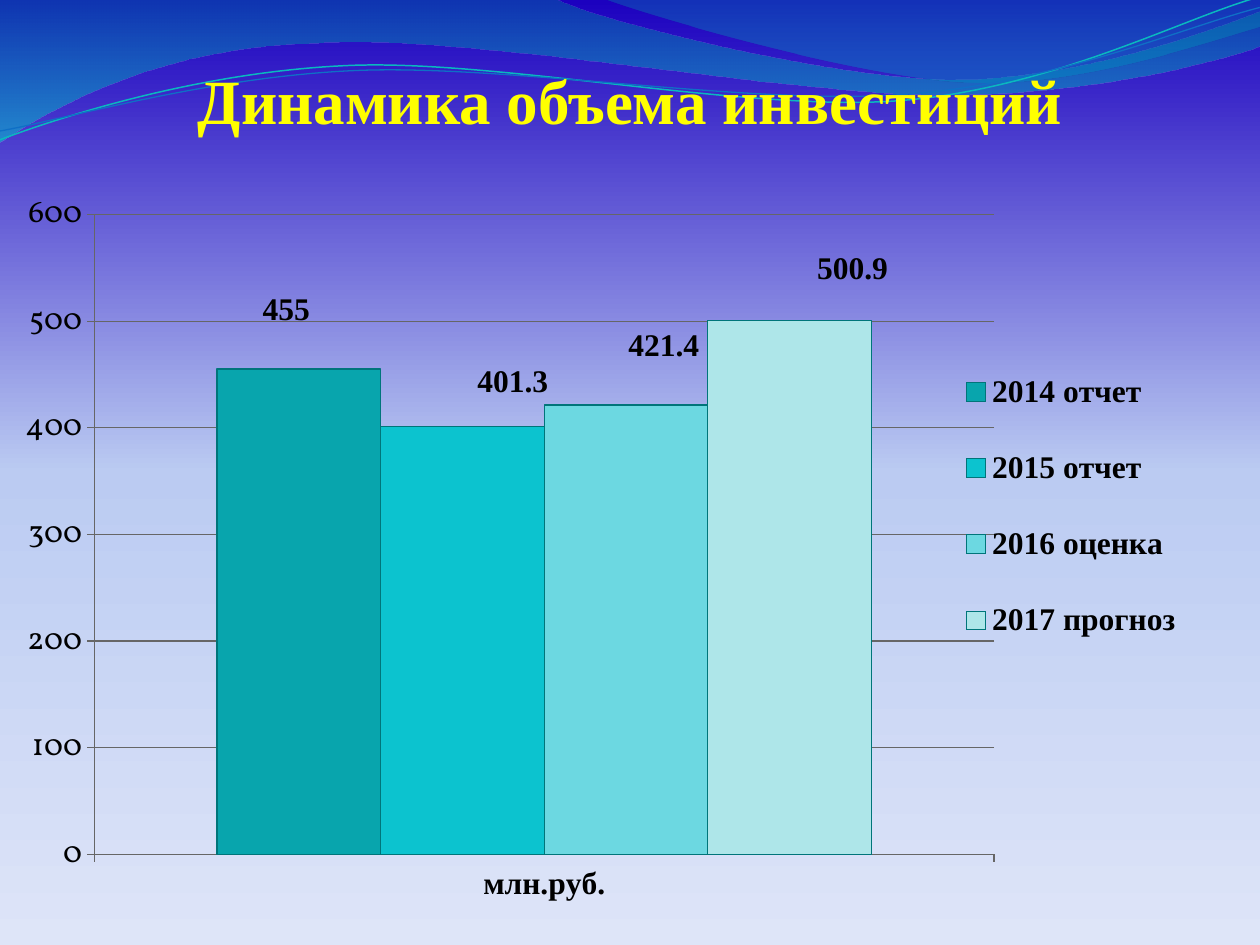
from dataclasses import dataclass
from math import cos, radians, sin

from lxml import etree
from pptx import Presentation
from pptx.chart.data import CategoryChartData
from pptx.dml.color import RGBColor
from pptx.enum.chart import (XL_CHART_TYPE, XL_LABEL_POSITION,
                             XL_LEGEND_POSITION, XL_TICK_MARK)
from pptx.enum.text import MSO_ANCHOR, PP_ALIGN
from pptx.oxml.ns import qn
from pptx.util import Inches, Pt

COLUMN = XL_CHART_TYPE.COLUMN_CLUSTERED
ABOVE = XL_LABEL_POSITION.OUTSIDE_END
RIGHT = XL_LEGEND_POSITION.RIGHT
OUTSIDE = XL_TICK_MARK.OUTSIDE
BOTTOM = MSO_ANCHOR.BOTTOM
CENTER = PP_ALIGN.CENTER


@dataclass(frozen=True)
class Theme:
    serif: str = "Times New Roman"
    digits: str = "Vollkorn"
    head: str = "FFFF00"
    ink: str = "000000"
    grid: str = "666666"
    edge: str = "00757A"
    head_size: int = 36
    size: int = 18


@dataclass(frozen=True)
class Stop:
    pos: int
    color: str
    alpha: int = 100


@dataclass(frozen=True)
class Wave:
    """Start point, then legs of 2 (line) or 6 (cubic curve) numbers."""
    start: tuple
    legs: tuple
    stops: tuple = ()
    line: str = ""
    width: float = 0
    turn: float = 0


@dataclass(frozen=True)
class Bar:
    name: str
    value: float
    color: str
    shift: tuple


THEME = Theme()
SKY = (Stop(0, "1C01BF"), Stop(50, "BBCBF2"), Stop(100, "DEE5F8"))
WAVES = (
    Wave((0, 0), ((4.4, -0.01), (4.76, 0.17, 6.64, 0.63, 7.58, 0.63),
                  (8.53, 0.63, 9.58, 0.26, 10, 0.09), (10.01, 0.36),
                  (9.83, 0.44, 8.7, 0.76, 7.46, 0.75),
                  (6.22, 0.75, 3.82, 0.28, 2.57, 0.34),
                  (1.29, 0.36, 0.46, 0.83, -0.01, 1.13)),
         stops=(Stop(0, "0074A1", 45), Stop(100, "00C6CF", 55))),
    Wave((4.79, -0.01), ((5.09, 0.11, 6.82, 0.62, 7.69, 0.65),
                         (8.56, 0.69, 9.61, 0.32, 10, 0.21), (10, 0)),
         stops=(Stop(0, "00A1A9", 30), Stop(80, "008BBF", 45))),
    Wave((0, 1.11), ((0.48, 0.93, 1.58, 0.57, 2.77, 0.52),
                     (3.95, 0.47, 5.93, 0.89, 7.13, 0.8),
                     (8.33, 0.71, 9.38, 0.15, 9.98, -0.02)),
         line="0AB8BF", width=0.85, turn=-2.7),
    Wave((0, 1.04), ((0.47, 0.96, 1.64, 0.61, 2.83, 0.56),
                     (4.03, 0.51, 5.97, 0.84, 7.17, 0.75),
                     (8.36, 0.67, 9.41, 0.21, 10, 0.06)),
         line="0F6FC6", width=0.75, turn=-2.7),
)
BARS = (
    Bar("2014 отчет", 455, "08A5AD", (-0.01, -0.05)),
    Bar("2015 отчет", 401.3, "0CC3CF", (0.04, -0.03)),
    Bar("2016 оценка", 421.4, "6CD8E1", (0.03, -0.05)),
    Bar("2017 прогноз", 500.9, "AEE6E9", (0.05, -0.04)),
)


def rgb(color: str) -> RGBColor:
    return RGBColor.from_string(color)


def style(font, name: str, size: float, color: str, bold: bool) -> None:
    font.name, font.size, font.bold = name, Pt(size), bold
    font.color.rgb = rgb(color)


def stroke(line, color: str, width: float = 0.75) -> None:
    line.color.rgb = rgb(color)
    line.width = Pt(width)


def blend(fill, root, stops: tuple) -> None:
    """Give the fill found under root a top-down gradient."""
    fill.gradient()
    grad = root.find(".//" + qn("a:gradFill"))
    for child in list(grad):
        grad.remove(child)
    bed = etree.SubElement(grad, qn("a:gsLst"))
    for stop in stops:
        mark = etree.SubElement(bed, qn("a:gs"), pos=str(stop.pos * 1000))
        tint = etree.SubElement(mark, qn("a:srgbClr"), val=stop.color)
        if stop.alpha < 100:
            etree.SubElement(tint, qn("a:alpha"), val=str(stop.alpha * 1000))
    etree.SubElement(grad, qn("a:lin"), ang="5400000", scaled="0")


def level(wave: Wave) -> list:
    """List the wave's points as they lie before its shape is turned."""
    flat = wave.start + sum(wave.legs, ())
    dots = list(zip(flat[::2], flat[1::2]))
    mid_x, mid_y = ((a + b) / 2 for a, b in zip(dots[0], dots[-1]))
    c, s = cos(radians(-wave.turn)), sin(radians(-wave.turn))
    return [(Inches(mid_x + (x - mid_x) * c - (y - mid_y) * s),
             Inches(mid_y + (x - mid_x) * s + (y - mid_y) * c))
            for x, y in dots]


def bend(shape, legs: tuple) -> None:
    """Join each three segments of a curved leg into one cubic curve."""
    track = shape._element.find(".//" + qn("a:path"))
    parts = iter(track.findall(qn("a:lnTo")))
    for leg in legs:
        first = next(parts)
        if len(leg) == 2:
            continue
        curve = etree.Element(qn("a:cubicBezTo"))
        first.addprevious(curve)
        for part in (first, next(parts), next(parts)):
            curve.append(part[0])
            track.remove(part)


def draw_wave(slide, wave: Wave) -> None:
    dots = level(wave)
    pen = slide.shapes.build_freeform(*dots[0])
    pen.add_line_segments(dots[1:], close=bool(wave.stops))
    shape = pen.convert_to_shape()
    bend(shape, wave.legs)
    shape.rotation = wave.turn
    shape.shadow.inherit = False
    if wave.stops:
        blend(shape.fill, shape._element, wave.stops)
        shape.line.fill.background()
    else:
        shape.fill.background()
        stroke(shape.line, wave.line, wave.width)


def draw_title(slide, text: str) -> None:
    title = slide.shapes.title
    slide.shapes._spTree.append(title._element)
    title.left, title.top = Inches(0.23), Inches(0)
    title.width, title.height = Inches(9.54), Inches(1.09)
    frame = title.text_frame
    frame.vertical_anchor = BOTTOM
    frame.margin_left = frame.margin_right = frame.margin_bottom = 0
    para = frame.paragraphs[0]
    para.alignment = CENTER
    run = para.add_run()
    run.text = text
    style(run.font, THEME.serif, THEME.head_size, THEME.head, True)


def place(part, index: int, **items) -> None:
    """Set a manual layout as the child of a chart part at index."""
    for old in part.findall(qn("c:layout")):
        part.remove(old)
    layout = etree.Element(qn("c:layout"))
    part.insert(index, layout)
    manual = etree.SubElement(layout, qn("c:manualLayout"))
    for key, value in items.items():
        etree.SubElement(manual, qn("c:" + key), val=str(value))


def draw_bar(series, bar: Bar) -> None:
    series.format.fill.solid()
    series.format.fill.fore_color.rgb = rgb(bar.color)
    stroke(series.format.line, THEME.edge)
    series.data_labels.show_value = True
    label = series.points[0].data_label
    for each in (series.data_labels, label):
        style(each.font, THEME.serif, THEME.size, THEME.ink, True)
        each.position = ABOVE
    x, y = bar.shift
    place(series._element.find(".//" + qn("c:dLbl")), 1, x=x, y=y)
    for lead in series._element.iter(qn("c:showLeaderLines")):
        lead.set("val", "0")


def draw_chart(slide) -> None:
    data = CategoryChartData()
    data.categories = ["млн.руб."]
    for bar in BARS:
        data.add_series(bar.name, [bar.value])
    chart = slide.shapes.add_chart(COLUMN, Inches(0), Inches(1.41), Inches(10),
                                   Inches(5.86), data).chart
    style(chart.font, THEME.digits, THEME.size, THEME.ink, False)
    chart.has_title = False
    plot = chart.plots[0]
    plot.gap_width, plot.overlap, plot.vary_by_categories = 150, 0, False
    for bar, series in zip(BARS, plot.series):
        draw_bar(series, bar)

    axis, scale = chart.category_axis, chart.value_axis
    for each in (axis, scale):
        each.major_tick_mark = OUTSIDE
        stroke(each.format.line, THEME.grid)
    style(axis.tick_labels.font, THEME.serif, THEME.size, THEME.ink, True)
    scale.minimum_scale, scale.maximum_scale, scale.major_unit = 0, 600, 100
    stroke(scale.major_gridlines.format.line, THEME.grid)

    chart.has_legend = True
    legend = chart.legend
    legend.position, legend.include_in_layout = RIGHT, False
    style(legend.font, THEME.serif, THEME.size, THEME.ink, True)
    place(legend._element, 1, xMode="edge", yMode="edge",
          x=0.76, y=0.21, w=0.18, h=0.47)
    area = chart._chartSpace.find(".//" + qn("c:plotArea"))
    place(area, 0, layoutTarget="inner", xMode="edge", yMode="edge",
          x=0.75 / 10, y=0.05, w=7.14 / 10, h=5.08 / 5.86)


def main() -> None:
    deck = Presentation()
    deck.slide_width, deck.slide_height = Inches(10), Inches(7.5)
    slide = deck.slides.add_slide(deck.slide_layouts[5])
    blend(slide.background.fill, slide._element, SKY)
    for wave in WAVES:
        draw_wave(slide, wave)
    draw_title(slide, "Динамика объема инвестиций")
    draw_chart(slide)
    deck.save("out.pptx")


if __name__ == "__main__":
    main()
